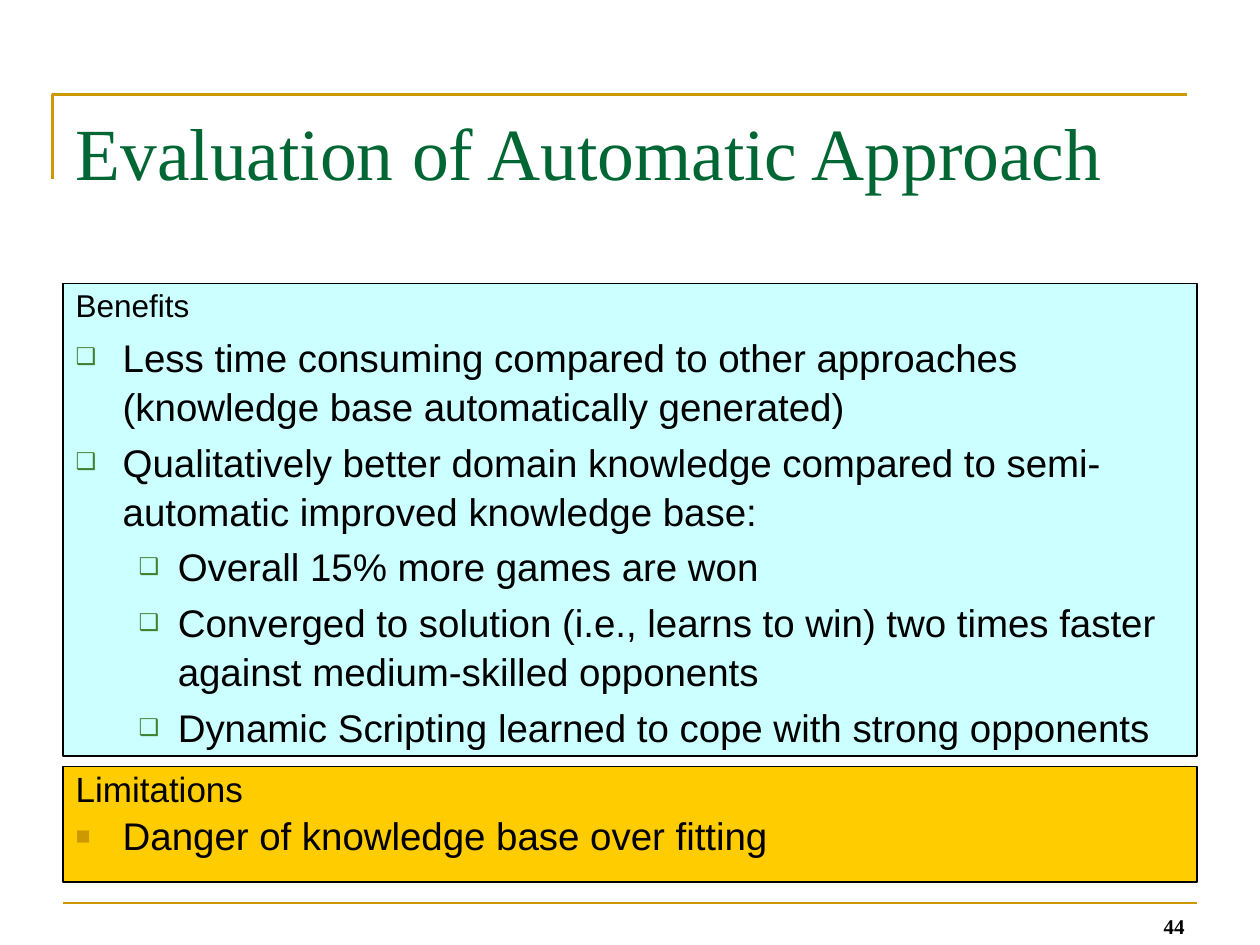
from lxml import etree
from pptx import Presentation
from pptx.dml.color import RGBColor
from pptx.enum.shapes import MSO_CONNECTOR
from pptx.enum.text import MSO_ANCHOR, MSO_AUTO_SIZE, PP_ALIGN
from pptx.oxml.ns import qn
from pptx.util import Cm, Pt

STRAIGHT = MSO_CONNECTOR.STRAIGHT
TOP, BOTTOM = MSO_ANCHOR.TOP, MSO_ANCHOR.BOTTOM
LEFT, RIGHT = PP_ALIGN.LEFT, PP_ALIGN.RIGHT
NO_FIT = MSO_AUTO_SIZE.NONE

COLORS = {
    "rule": "CC9900",
    "title": "006633",
    "text": "000000",
    "benefits": "CCFFFF",
    "limitations": "FFCC00",
    "hollow_bullet": "3B812F",
}
MARGIN, CONTENT_WIDTH = Cm(1.27), Cm(22.86)
LEVELS = [(Cm(0.95), Cm(-0.95)), (Cm(2.06), Cm(-0.79))]

BENEFITS = [
    (0, "Less time consuming compared to other approaches (knowledge base automatically generated)"),
    (0, "Qualitatively better domain knowledge compared to semi-automatic improved knowledge base:"),
    (1, "Overall 15% more games are won"),
    (1, "Converged to solution (i.e., learns to win) two times faster against medium-skilled opponents"),
    (1, "Dynamic Scripting learned to cope with strong opponents"),
]
LIMITATIONS = [(0, "Danger of knowledge base over fitting")]


def color(key):
    """Return the named palette colour."""
    return RGBColor.from_string(COLORS[key])


def apply(target, values):
    """Set every attribute in a dict of format values."""
    for attribute, value in values.items():
        setattr(target, attribute, value)


def place(part, box):
    """Move a part to a left, top, width, height box."""
    apply(part, dict(zip(("left", "top", "width", "height"), box)))


def write(paragraph, text, ink="text", **font):
    """Add one formatted run to a paragraph."""
    run = paragraph.add_run()
    run.text = text
    apply(run.font, font)
    run.font.color.rgb = color(ink)


def draw_line(line, ink, width):
    """Give an outline its colour and width."""
    line.color.rgb = color(ink)
    line.width = Pt(width)


def set_bullet(paragraph, level, bullet):
    """Indent a paragraph and give it a bullet, or none."""
    properties = paragraph._p.get_or_add_pPr()
    margin, indent = LEVELS[level]
    properties.set("marL", str(margin))
    properties.set("indent", str(indent))
    if bullet is None:
        etree.SubElement(properties, qn("a:buNone"))
        return
    char, ink, percent = bullet
    tint = etree.SubElement(properties, qn("a:buClr"))
    etree.SubElement(tint, qn("a:srgbClr"), val=COLORS[ink])
    etree.SubElement(properties, qn("a:buSzPct"), val=str(percent * 1000))
    etree.SubElement(properties, qn("a:buFont"), typeface="Arial")
    etree.SubElement(properties, qn("a:buChar"), char=char)


def add_title(slide, box, text):
    """Fill the title placeholder and draw the corner rule around it."""
    left, top, width, height = box
    title = slide.shapes.title
    place(title, box)
    apply(title.text_frame, {"vertical_anchor": TOP, "auto_size": NO_FIT, "word_wrap": True})
    heading = title.text_frame.paragraphs[0]
    heading.alignment = LEFT
    write(heading, text, "title", name="Times New Roman", size=Pt(42))

    corner_left, corner_top = left - Cm(0.21), top - Cm(0.13)
    builder = slide.shapes.build_freeform(corner_left, corner_top + Cm(1.7))
    builder.add_line_segments(
        [(corner_left, corner_top), (corner_left + width, corner_top)], close=False)
    corner = builder.convert_to_shape()
    corner.shadow.inherit = False
    corner.fill.background()
    draw_line(corner.line, "rule", 1.5)


def add_panel(panel, box, fill, heading, heading_size, items, bullet, spacing):
    """Turn a body placeholder into a filled panel with a heading and a list."""
    place(panel, box)
    panel.fill.solid()
    panel.fill.fore_color.rgb = color(fill)
    draw_line(panel.line, "text", 0.75)
    frame = panel.text_frame
    apply(frame, {"vertical_anchor": TOP, "auto_size": NO_FIT, "word_wrap": True})
    rows = [(0, heading, heading_size, None, 0.9)]
    rows += [(level, text, 22, bullet, spacing) for level, text in items]
    for number, (level, text, size, mark, line_spacing) in enumerate(rows):
        paragraph = frame.add_paragraph() if number else frame.paragraphs[0]
        apply(paragraph, {"level": level, "alignment": LEFT,
                          "line_spacing": line_spacing, "space_before": Pt(4)})
        set_bullet(paragraph, level, mark)
        write(paragraph, text, name="Arial", size=Pt(size))


def add_footer(slide, box, number):
    """Draw the bottom rule with the page number at its right end."""
    left, top, width, height = box
    rule = slide.shapes.add_connector(STRAIGHT, left, top, left + width, top)
    draw_line(rule.line, "rule", 1.5)
    etree.SubElement(rule._element.spPr, qn("a:effectLst"))
    number_width, gap = Cm(5.92), Cm(0.18)
    page = slide.shapes.add_textbox(
        left + width - number_width, top + gap, number_width, height - gap)
    apply(page.text_frame, {"word_wrap": True, "vertical_anchor": BOTTOM})
    paragraph = page.text_frame.paragraphs[0]
    paragraph.alignment = RIGHT
    write(paragraph, number, name="Times New Roman", size=Pt(12), bold=True)


def main():
    """Build and save the evaluation slide."""
    deck = Presentation()
    apply(deck, {"slide_width": Cm(25.4), "slide_height": Cm(19.05)})
    slide = deck.slides.add_slide(deck.slide_layouts[3])
    benefits, limitations = list(slide.placeholders)[1:]
    add_title(slide, (MARGIN, Cm(2.03), CONTENT_WIDTH, Cm(3.18)),
              "Evaluation of Automatic Approach")
    add_panel(benefits, (MARGIN, Cm(5.72), CONTENT_WIDTH, Cm(9.52)), "benefits",
              "Benefits", 18, BENEFITS, ("❑", "hollow_bullet", 60), 1.06)
    add_panel(limitations, (MARGIN, Cm(15.45), CONTENT_WIDTH, Cm(2.33)), "limitations",
              "Limitations", 20, LIMITATIONS, ("■", "rule", 65), 0.9)
    add_footer(slide, (MARGIN, Cm(18.2), CONTENT_WIDTH, Cm(0.85)), "44")
    deck.save("out.pptx")


if __name__ == "__main__":
    main()
